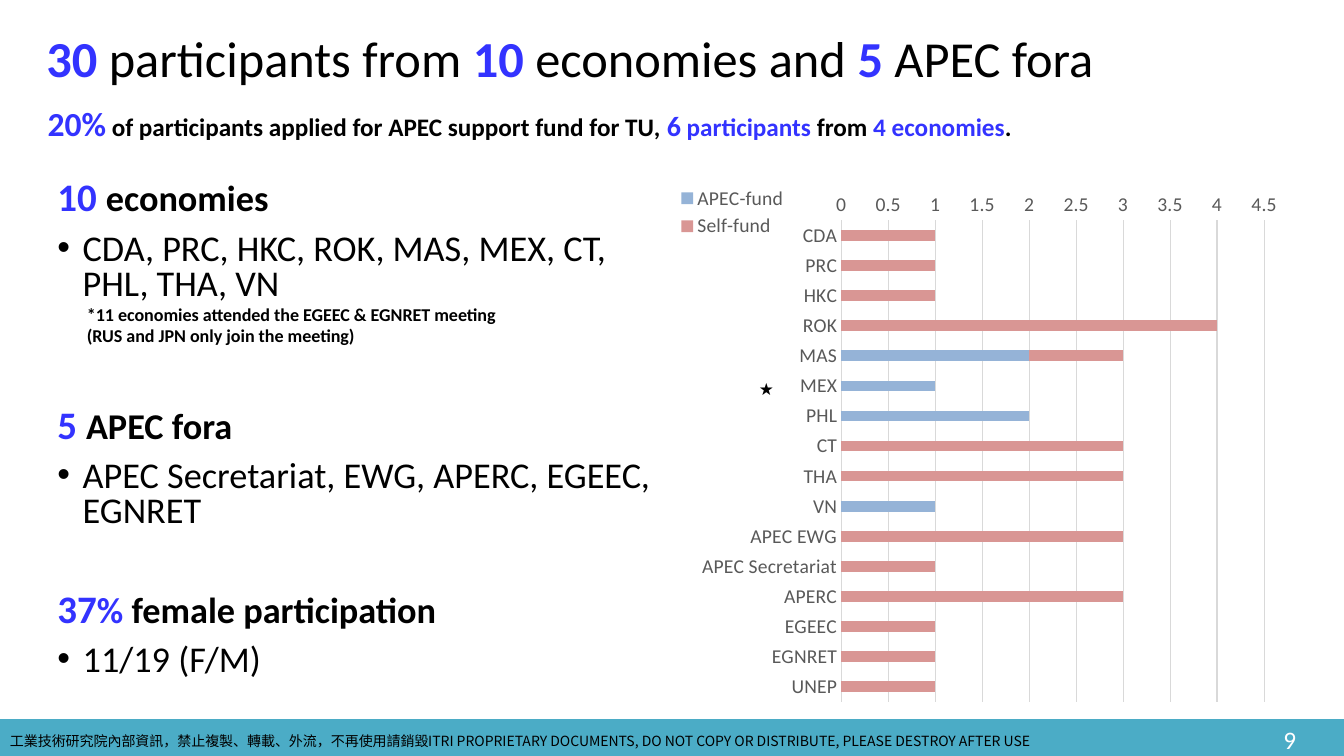
"""Build the participant overview slide: headline figures, notes and a stacked bar chart."""
from lxml import etree
from pptx import Presentation
from pptx.chart.data import CategoryChartData
from pptx.dml.color import RGBColor
from pptx.enum.chart import XL_CHART_TYPE as ChartType, XL_LEGEND_POSITION as LegendSide
from pptx.enum.chart import XL_TICK_MARK as TickMark
from pptx.enum.shapes import MSO_SHAPE as Preset
from pptx.enum.text import MSO_ANCHOR as Anchor, PP_ALIGN as Align
from pptx.oxml.ns import qn
from pptx.util import Pt

BLUE = RGBColor(0x33, 0x33, 0xFF)
BLACK = RGBColor(0, 0, 0)
WHITE = RGBColor(0xFF, 0xFF, 0xFF)
TEAL = RGBColor(0x4B, 0xAC, 0xC6)
GRAY = RGBColor(0x59, 0x59, 0x59)
PALE_GRAY = RGBColor(0xD9, 0xD9, 0xD9)
FUND_BLUE = RGBColor(0x95, 0xB3, 0xD7)
SELF_PINK = RGBColor(0xD9, 0x96, 0x94)
CJK_FONT = "Noto Sans CJK SC"

prs = Presentation()
prs.slide_width, prs.slide_height = Pt(960), Pt(540)
slide = prs.slides.add_slide(prs.slide_layouts[6])


def add_box(left, top, width, height, anchor=Anchor.TOP):
    """Add a wrapping text box and return its text frame."""
    frame = slide.shapes.add_textbox(Pt(left), Pt(top), Pt(width), Pt(height)).text_frame
    frame.word_wrap = True
    frame.vertical_anchor = anchor
    return frame


def add_run(paragraph, text, size=18, color=BLACK, bold=False, font="Calibri"):
    """Append formatted text to a paragraph."""
    run = paragraph.add_run()
    run.text = text
    run.font.size = Pt(size)
    run.font.bold = bold
    run.font.name = font
    run.font.color.rgb = color
    east_asian = etree.SubElement(run.font._element, qn("a:ea"))
    east_asian.set("typeface", font)


footer_band = slide.shapes.add_shape(Preset.RECTANGLE, 0, Pt(514), Pt(960), Pt(26))
footer_band.shadow.inherit = False
footer_band.fill.solid()
footer_band.fill.fore_color.rgb = TEAL
footer_band.line.color.rgb = TEAL
footer_band.line.width = Pt(1)

notice = add_box(0, 520, 854, 19.5).paragraphs[0]
add_run(
    notice,
    "工業技術研究院內部資訊，禁止複製、轉載、外流，不再使用請銷毀"
    "ITRI PROPRIETARY DOCUMENTS, DO NOT COPY OR DISTRIBUTE, PLEASE DESTROY AFTER USE",
    size=10, font=CJK_FONT,
)

participants = {
    "CDA": (None, 1), "PRC": (None, 1), "HKC": (None, 1), "ROK": (None, 4),
    "MAS": (2, 1), "MEX": (1, None), "PHL": (2, None), "CT": (None, 3),
    "THA": (None, 3), "VN": (1, None), "APEC EWG": (None, 3),
    "APEC Secretariat": (None, 1), "APERC": (None, 3), "EGEEC": (None, 1),
    "EGNRET": (None, 1), "UNEP": (None, 1),
}
funding = CategoryChartData()
funding.categories = list(participants)
for name, counts in zip(("APEC-fund", "Self-fund"), zip(*participants.values())):
    funding.add_series(name, counts)
chart = slide.shapes.add_chart(
    ChartType.BAR_STACKED, Pt(480), Pt(126.5), Pt(432), Pt(386.5), funding
).chart
chart.has_title = False
chart.font.size = Pt(14)
chart.font.name = "Calibri"
chart.font.color.rgb = GRAY

bars = chart.plots[0]
bars.gap_width, bars.overlap = 182, 100
bars.vary_by_categories = False
for series, color in zip(bars.series, (FUND_BLUE, SELF_PINK)):
    series.format.fill.solid()
    series.format.fill.fore_color.rgb = color

economy_axis, count_axis = chart.category_axis, chart.value_axis
for axis in (economy_axis, count_axis):
    axis.major_tick_mark = axis.minor_tick_mark = TickMark.NONE
economy_axis.reverse_order = True
economy_axis.has_major_gridlines = False
count_axis.minimum_scale, count_axis.maximum_scale = 0, 4.5
count_axis.major_unit = 0.5
count_axis.tick_labels.number_format = "General"
count_axis.tick_labels.number_format_is_linked = False
count_axis.format.line.fill.background()
for line in (economy_axis.format.line, count_axis.major_gridlines.format.line):
    line.color.rgb = PALE_GRAY
    line.width = Pt(0.75)

chart.has_legend = True
chart.legend.position = LegendSide.LEFT
chart.legend.include_in_layout = False
plot_area = chart._chartSpace.chart.plotArea
legend = chart.legend._element
for part, place, bounds in (
    (plot_area, 0, (0.28, 0.08, 0.7, 0.89)),
    (legend, 1, (0, 0.01, 0.2, 0.11)),
):
    for old_layout in part.findall(qn("c:layout")):
        part.remove(old_layout)
    layout = etree.Element(qn("c:layout"))
    manual = etree.SubElement(layout, qn("c:manualLayout"))
    settings = [("xMode", "edge"), ("yMode", "edge"), *zip("xywh", bounds)]
    if part is plot_area:
        settings.insert(0, ("layoutTarget", "inner"))
    for tag, value in settings:
        etree.SubElement(manual, qn(f"c:{tag}")).set("val", str(value))
    part.insert(place, layout)

title = add_box(26, 13.5, 907, 60, Anchor.MIDDLE).paragraphs[0]
title.line_spacing = 0.9
title.space_after = Pt(8)
for text, is_figure in (
    ("30", True), (" participants from ", False), ("10", True),
    (" economies and ", False), ("5", True), (" APEC fora", False),
):
    add_run(title, text, size=36, color=BLUE if is_figure else BLACK, bold=is_figure)

support = add_box(20, 70, 716.5, 36).paragraphs[0]
support.alignment = Align.CENTER
for text, size, color in (
    ("20%", 24, BLUE),
    (" of participants applied for APEC support fund for TU, ", 18, BLACK),
    ("6", 20, BLUE), (" participants ", 18, BLUE), ("from ", 18, BLACK),
    ("4 economies", 18, BLUE), (".", 18, BLACK),
):
    add_run(support, text, size=size, color=color, bold=True)

summary = add_box(34, 126.5, 445.5, 374)
for figure, unit, topic, detail, remarks in (
    ("10 ", "", "economies", "CDA, PRC, HKC, ROK, MAS, MEX, CT, PHL, THA, VN",
     ("*11 economies attended the EGEEC & EGNRET meeting",
      "(RUS and JPN only join the meeting)")),
    ("5 ", "", "APEC fora", "APEC Secretariat, EWG, APERC, EGEEC, EGNRET", ()),
    ("37", "% ", "female participation", "11/19 (F/M)", ()),
):
    if summary.text:
        heading = summary.add_paragraph()
        heading.space_before = Pt(45)
    else:
        heading = summary.paragraphs[0]
    heading.line_spacing = 0.8
    add_run(heading, figure, size=27.8, color=BLUE, bold=True)
    if unit:
        add_run(heading, unit, size=25.9, color=BLUE, bold=True)
    add_run(heading, topic, size=25.9, bold=True)

    bullet = summary.add_paragraph()
    bullet.line_spacing = 0.8
    bullet.space_before = Pt(10)
    properties = bullet._p.get_or_add_pPr()
    properties.set("marL", str(Pt(18)))
    properties.set("indent", str(Pt(-18)))
    etree.SubElement(properties, qn("a:buFont")).set("typeface", "Arial")
    etree.SubElement(properties, qn("a:buChar")).set("char", "•")
    add_run(bullet, detail, size=25.9)

    for text in remarks:
        remark = summary.add_paragraph()
        remark._p.get_or_add_pPr().set("indent", str(Pt(21)))
        add_run(remark, text, size=12.9, bold=True)

star = add_box(535, 267, 24.5, 21.5).paragraphs[0]
add_run(star, "★", size=12)

page_number = add_box(717, 513.5, 216, 29, Anchor.MIDDLE).paragraphs[0]
page_number.alignment = Align.RIGHT
add_run(page_number, "9", color=WHITE)

prs.save("out.pptx")
